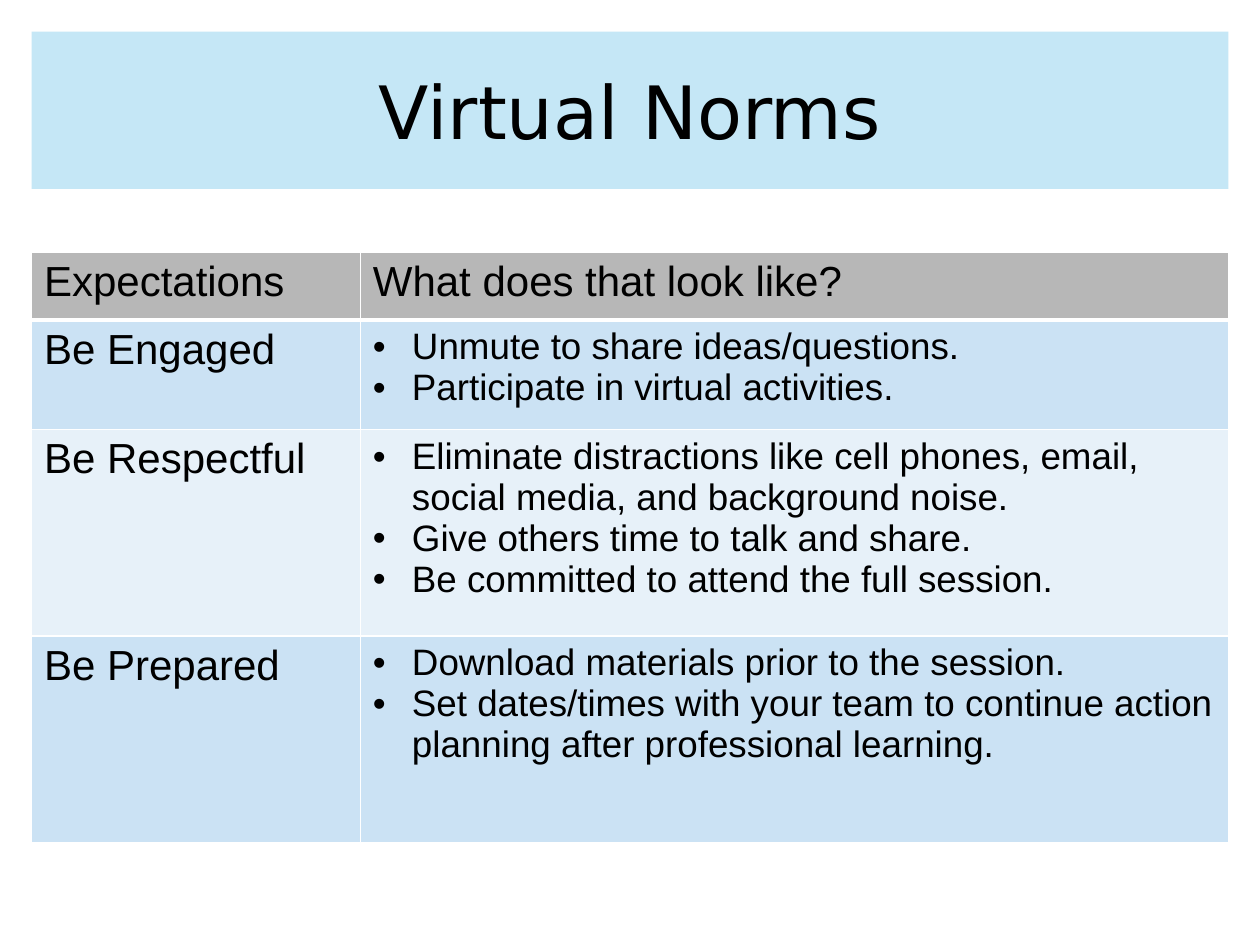
from lxml import etree
from pptx import Presentation
from pptx.dml.color import RGBColor
from pptx.enum.text import MSO_ANCHOR, PP_ALIGN
from pptx.oxml.ns import qn
from pptx.util import Inches, Pt

CENTER = PP_ALIGN.CENTER
MIDDLE = MSO_ANCHOR.MIDDLE

BLACK = RGBColor(0x00, 0x00, 0x00)
WHITE = RGBColor(0xFF, 0xFF, 0xFF)
SKY = RGBColor(0xA9, 0xDC, 0xF2)
GRAY = RGBColor(0xB7, 0xB7, 0xB7)
BLUE = RGBColor(0xCB, 0xE2, 0xF4)
PALE_BLUE = RGBColor(0xE7, 0xF1, 0xF9)

TITLE_ONLY = 5
UNIT = Inches(0.25)  # grid step: the slide is 40 columns by 30 rows
COLUMN_WIDTHS = (2.61, 6.89)
ROW_HEIGHTS = (0.54, 0.87, 1.64, 1.64)

HEADINGS = ("Expectations", "What does that look like?")
NORMS = (
    ("Be Engaged", (
        "Unmute to share ideas/questions.",
        "Participate in virtual activities.",
    )),
    ("Be Respectful", (
        "Eliminate distractions like cell phones, email, social media, "
        "and background noise.",
        "Give others time to talk and share.",
        "Be committed to attend the full session.",
    )),
    ("Be Prepared", (
        "Download materials prior to the session.",
        "Set dates/times with your team to continue action planning "
        "after professional learning.",
    )),
)


class NormsSlide:
    """Holds the style and the current slide."""

    title_font, title_size = "DejaVu Sans", 42
    table_font, label_size, bullet_size = "Arial", 24, 21
    indent = Inches(0.31)

    def __init__(self, deck):
        self.slide = deck.slides.add_slide(deck.slide_layouts[TITLE_ONLY])

    def format_runs(self, paragraph, font, size):
        for run in paragraph.runs:
            run.font.name = font
            run.font.size = Pt(size)
            run.font.bold = False
            run.font.color.rgb = BLACK

    def title(self, text, column, row, columns, rows):
        banner = self.slide.shapes.title
        banner.left, banner.top = UNIT * column, UNIT * row
        banner.width, banner.height = UNIT * columns, UNIT * rows
        banner.fill.solid()
        banner.fill.fore_color.rgb = SKY
        color = banner.fill._xPr.find(qn("a:solidFill"))[0]
        etree.SubElement(color, qn("a:alpha"), val="67000")
        frame = banner.text_frame
        frame.text = text
        frame.vertical_anchor = MIDDLE
        frame.paragraphs[0].alignment = CENTER
        self.format_runs(frame.paragraphs[0], self.title_font, self.title_size)

    def bullet(self, paragraph):
        properties = paragraph._p.get_or_add_pPr()
        properties.set("marL", str(self.indent))
        properties.set("indent", str(-self.indent))
        color = etree.SubElement(properties, qn("a:buClr"))
        etree.SubElement(color, qn("a:srgbClr"), val=str(BLACK))
        etree.SubElement(properties, qn("a:buFont"), typeface=self.table_font)
        etree.SubElement(properties, qn("a:buChar"), char="•")

    def borders(self, cell, top, bottom):
        properties = cell._tc.get_or_add_tcPr()
        for side, width in (("L", 1), ("R", 1), ("T", top), ("B", bottom)):
            line = etree.SubElement(properties, qn(f"a:ln{side}"), w=str(Pt(width)))
            fill = etree.SubElement(line, qn("a:solidFill"))
            etree.SubElement(fill, qn("a:srgbClr"), val=str(WHITE))

    def cell(self, cell, lines, color, size, bulleted=False, top=1, bottom=1):
        self.borders(cell, top, bottom)
        cell.fill.solid()
        cell.fill.fore_color.rgb = color
        cell.text_frame.text = "\n".join(lines)
        for paragraph in cell.text_frame.paragraphs:
            self.format_runs(paragraph, self.table_font, size)
            if bulleted:
                self.bullet(paragraph)

    def norms_table(self, headings, norms, column, row, columns):
        table = self.slide.shapes.add_table(
            len(norms) + 1, len(headings), UNIT * column, UNIT * row,
            UNIT * columns, Inches(sum(ROW_HEIGHTS))).table
        for table_column, width in zip(table.columns, COLUMN_WIDTHS):
            table_column.width = Inches(width)
        for table_row, height in zip(table.rows, ROW_HEIGHTS):
            table_row.height = Inches(height)

        # Header row, with a thick rule below it
        for index, heading in enumerate(headings):
            self.cell(table.cell(0, index), [heading], GRAY, self.label_size, bottom=3)

        # One banded row for each norm
        for index, (expectation, behaviors) in enumerate(norms, start=1):
            band = BLUE if index % 2 else PALE_BLUE
            top = 3 if index == 1 else 1
            self.cell(table.cell(index, 0), [expectation], band,
                      self.label_size, top=top)
            self.cell(table.cell(index, 1), behaviors, band,
                      self.bullet_size, bulleted=True, top=top)


def main():
    deck = Presentation()
    deck.slide_width, deck.slide_height = UNIT * 40, UNIT * 30
    page = NormsSlide(deck)
    page.title("Virtual Norms", column=1, row=1, columns=38, rows=5)
    page.norms_table(HEADINGS, NORMS, column=1, row=8, columns=38)
    deck.save("out.pptx")


if __name__ == "__main__":
    main()
